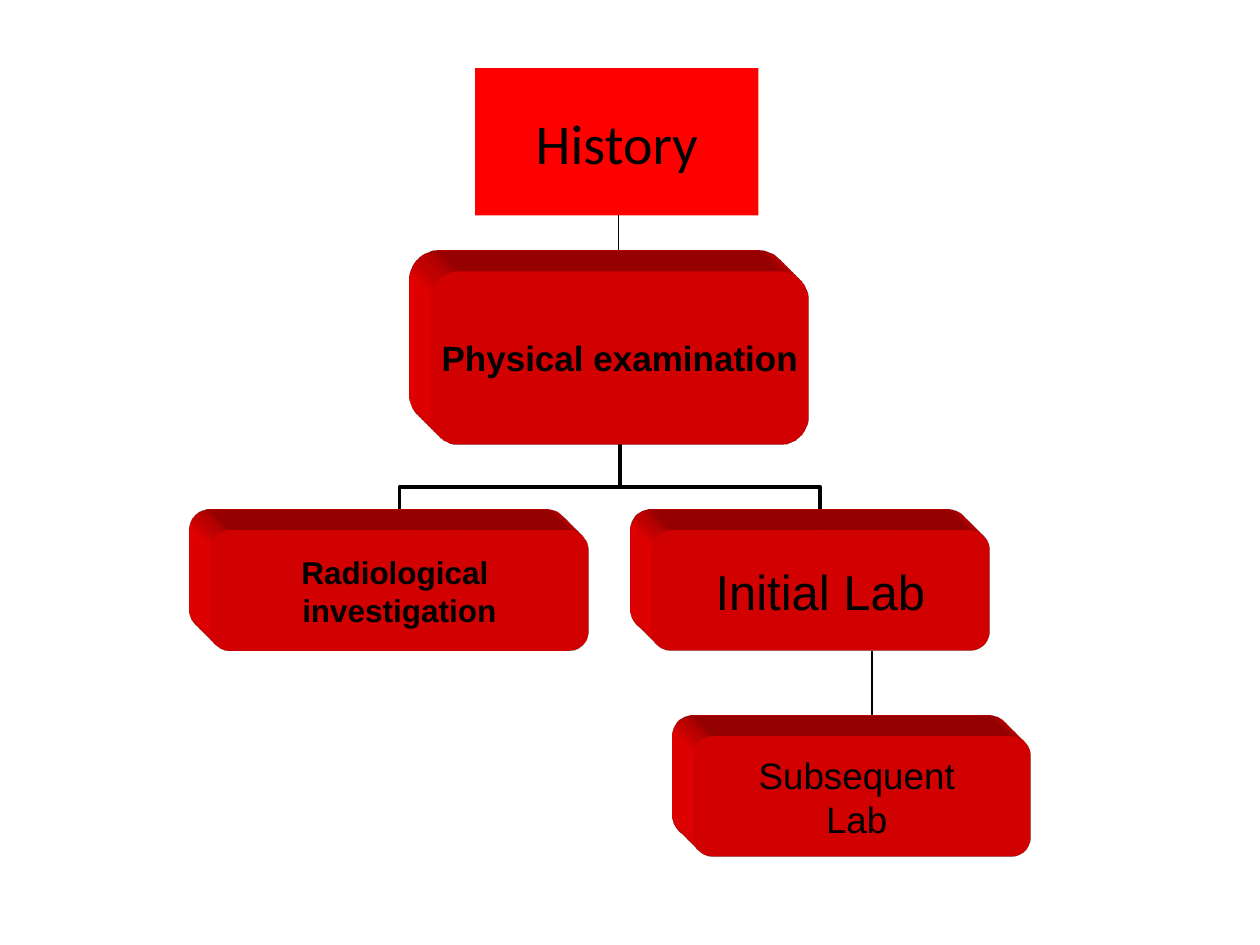
import pptx
import pptx.util
import pptx.dml.color
import pptx.enum.shapes
import pptx.enum.text
import pptx.oxml
import pptx.oxml.ns

WIDTH, HEIGHT = 10, 7.5
DEPTH = 2.25
SHAPE = pptx.enum.shapes.MSO_SHAPE
LINE = pptx.enum.shapes.MSO_CONNECTOR
NS = pptx.oxml.ns.nsdecls("a")


def across(percent):
    return pptx.util.Inches(WIDTH * percent / 100)


def down(percent):
    return pptx.util.Inches(HEIGHT * percent / 100)


def rgb(value):
    return pptx.dml.color.RGBColor.from_string(value)


def add_xml(sp, xml):
    sp._element.spPr.append(pptx.oxml.parse_xml(xml))


def add_box(s, kind, area, lines, size, font="Arial", bold=False):
    left, top, width, height = area
    sp = s.shapes.add_shape(kind, across(left), down(top), across(width), down(height))
    sp.shadow.inherit = False
    sp.fill.solid()
    sp.fill.fore_color.rgb = rgb("FF0000")
    sp.line.fill.background()
    tf = sp.text_frame
    tf.text = "\n".join(lines)
    tf.word_wrap = False
    tf.vertical_anchor = pptx.enum.text.MSO_ANCHOR.MIDDLE
    tf.margin_left = tf.margin_right = tf.margin_top = tf.margin_bottom = 0
    for p in tf.paragraphs:
        p.alignment = pptx.enum.text.PP_ALIGN.CENTER
        for r in p.runs:
            r.font.name = font
            r.font.size = pptx.util.Pt(size)
            r.font.bold = bold
            r.font.color.rgb = rgb("000000")
    return sp


def add_block(s, area, lines, size, bold=False):
    sp = add_box(s, SHAPE.ROUNDED_RECTANGLE, area, lines, size, bold=bold)
    add_xml(sp, f'<a:scene3d {NS}><a:camera prst="legacyObliqueTopLeft"/>'
                '<a:lightRig rig="legacyFlat3" dir="b"/></a:scene3d>')
    add_xml(sp, f'<a:sp3d {NS} extrusionH="430200" prstMaterial="legacyMatte">'
                '<a:extrusionClr><a:srgbClr val="FF0000"/></a:extrusionClr></a:sp3d>')


def add_line(s, kind, x1, y1, x2, y2, weight):
    c = s.shapes.add_connector(kind, x1, y1, x2, y2)
    c.line.color.rgb = rgb("000000")
    c.line.width = pptx.util.Pt(weight)
    add_xml(c, f"<a:effectLst {NS}/>")
    return c


def add_stem(s, x, top, bottom):
    add_line(s, LINE.STRAIGHT, across(x), down(top), across(x), down(bottom), 0.75)


def add_branch(s, parent, child):
    x1, y1 = across(child[0] + child[2] / 2), down(child[1])
    x2, y2 = across(parent[0] + parent[2] / 2), down(parent[1] + parent[3])
    mid_x, mid_y = (x1 + x2) // 2, (y1 + y2) // 2
    half_w, half_h = (y1 - y2) // 2, abs(x1 - x2) // 2
    side = 1 if x1 > x2 else -1
    c = add_line(s, LINE.ELBOW, mid_x - side * half_w, mid_y + half_h,
                 mid_x + side * half_w, mid_y - half_h, 2.25)
    angle = 270 if side > 0 else 90
    c._element.spPr.xfrm.set("rot", str(angle * 60000))


def main():
    prs = pptx.Presentation()
    prs.slide_width = pptx.util.Inches(WIDTH)
    prs.slide_height = pptx.util.Inches(HEIGHT)
    s = prs.slides.add_slide(prs.slide_layouts[6])

    history = (37.7, 7.2, 22.5, 15.6)
    physical = (34.2, 28.7, 30, 18.3)
    radiology = (16.7, 56.1, 30, 12.8)
    initial = (51.7, 56.1, 26.8, 12.8)
    subsequent = (55, 77.9, 26.8, 12.8)

    add_box(s, SHAPE.RECTANGLE, history, ["History"], 32, "Calibri")
    for child in (initial, radiology):
        add_branch(s, physical, child)
    add_block(s, physical, ["Physical examination"], 20, True)
    add_block(s, radiology, ["Radiological ", "investigation"], 18, True)
    add_block(s, initial, ["Initial Lab"], 28)
    add_block(s, subsequent, ["Subsequent ", "Lab "], 21)
    for x, upper, lower in ((49.1, history, physical), (69.2, initial, subsequent)):
        add_stem(s, x, upper[1] + upper[3], lower[1] - DEPTH)

    prs.save("out.pptx")


if __name__ == "__main__":
    main()
